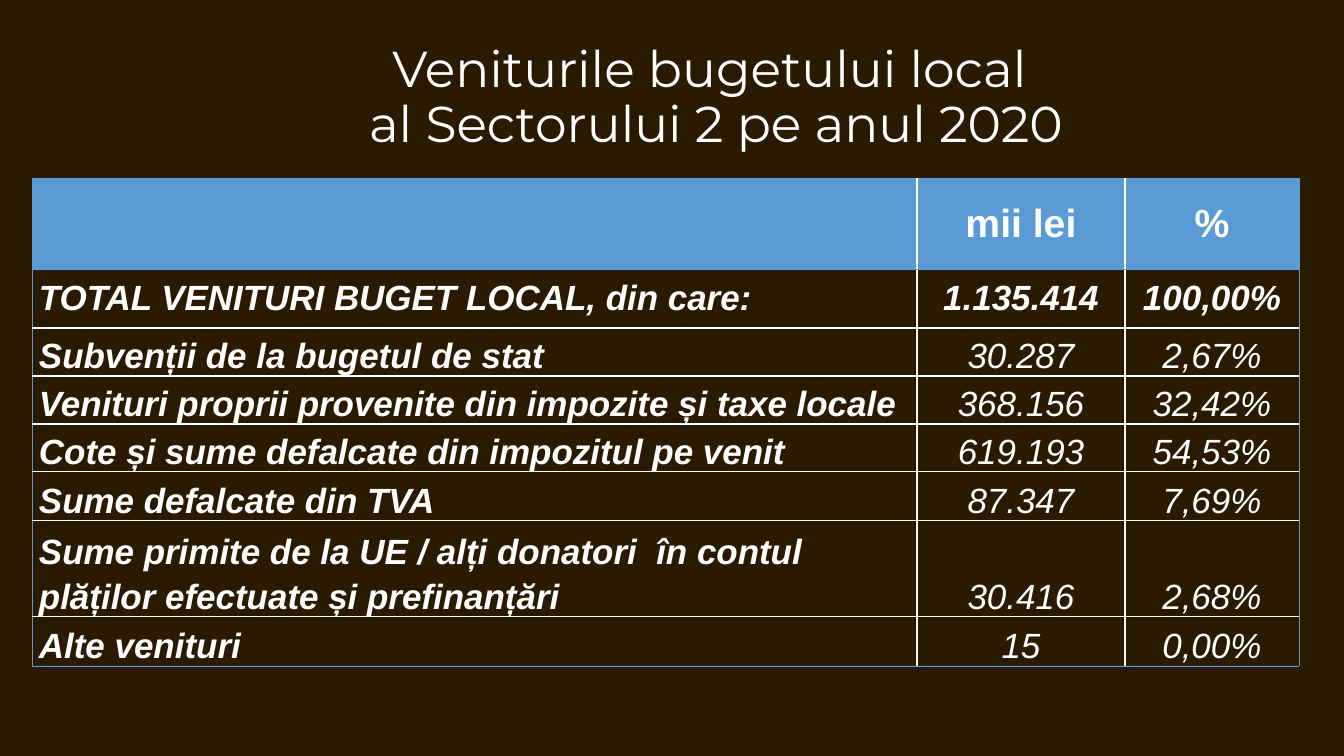
"""Build the slide on the local budget revenues of Sector 2 for 2020."""
from lxml import etree
from pptx import Presentation
from pptx.dml.color import RGBColor
from pptx.enum.text import MSO_ANCHOR, PP_ALIGN
from pptx.oxml.ns import qn
from pptx.util import Emu, Pt

LEFT, CENTER = PP_ALIGN.LEFT, PP_ALIGN.CENTER
MIDDLE, BOTTOM = MSO_ANCHOR.MIDDLE, MSO_ANCHOR.BOTTOM
WHITE, BLUE, BROWN = "FFFFFF", "5B9BD5", "2A1A00"

TITLE_LINES = ["Veniturile bugetului local", " al Sectorului 2 pe anul 2020"]
REVENUES = [
    ("", "mii lei", "%"),
    ("TOTAL VENITURI BUGET LOCAL, din care:", "1.135.414", "100,00%"),
    ("Subvenții de la bugetul de stat", "30.287", "2,67%"),
    ("Venituri proprii provenite din impozite și taxe locale", "368.156", "32,42%"),
    ("Cote și sume defalcate din impozitul pe venit", "619.193", "54,53%"),
    ("Sume defalcate din TVA", "87.347", "7,69%"),
    ("Sume primite de la UE / alți donatori  în contul plăților efectuate și prefinanțări",
     "30.416", "2,68%"),
    ("Alte venituri", "15", "0,00%"),
]
SLIDE_SIZE = (1344, 756)
TITLE_BOX = (106, 44, 1207, 109)
TABLE_ORIGIN = (32, 178)
COLUMN_WIDTHS = [885, 208, 174]
ROW_HEIGHTS = [91, 59, 48, 48, 48, 49, 96, 49]
SIDE_MARGIN = 7
HEADER, TOTAL = 0, 1
LAST_ROW, LAST_COLUMN = len(REVENUES) - 1, len(COLUMN_WIDTHS) - 1


def px(length):
    return Emu(round(length * 914400 / 100.8))


def color(value):
    return RGBColor.from_string(value)


def apply(target, values):
    for name, value in values.items():
        setattr(target, name, value)


def style_font(font, **values):
    apply(font, values)
    font.color.rgb = color(WHITE)


def border_edges(row, column):
    """Return the colour of each drawn edge: blue on the outline and under the header."""
    edges = {
        "a:lnL": BLUE if column == 0 else WHITE,
        "a:lnR": BLUE if column == LAST_COLUMN else WHITE,
        "a:lnT": BLUE if row <= TOTAL else WHITE,
        "a:lnB": BLUE if row in (HEADER, LAST_ROW) else WHITE,
    }
    return edges


def draw_borders(cell, edges):
    properties = cell._tc.get_or_add_tcPr()
    for position, (tag, edge_color) in enumerate(edges.items()):
        width = Pt(0.5) if edge_color == BLUE else Pt(1)
        line = etree.Element(qn(tag), w=str(int(width)))
        fill = etree.SubElement(line, qn("a:solidFill"))
        etree.SubElement(fill, qn("a:srgbClr"), val=edge_color)
        properties.insert(position, line)


def fill_title(title):
    apply(title, dict(zip(("left", "top", "width", "height"), map(px, TITLE_BOX))))
    apply(title.text_frame, {"word_wrap": True, "vertical_anchor": MIDDLE})
    paragraph = title.text_frame.paragraphs[0]
    apply(paragraph, {"alignment": CENTER, "line_spacing": 0.9})
    for index, text in enumerate(TITLE_LINES):
        if index:
            paragraph.add_line_break()
        run = paragraph.add_run()
        run.text = text
        style_font(run.font, name="Montserrat", size=Pt(36), bold=False)


def fill_cell(cell, text, row, column):
    is_detail = row > TOTAL
    apply(cell, {
        "margin_left": px(SIDE_MARGIN), "margin_right": px(SIDE_MARGIN),
        "margin_top": 0, "margin_bottom": 0,
        "vertical_anchor": BOTTOM if is_detail else MIDDLE,
    })
    if row == HEADER:
        cell.fill.solid()
        cell.fill.fore_color.rgb = color(BLUE)
    else:
        cell.fill.background()
    draw_borders(cell, border_edges(row, column))
    paragraph = cell.text_frame.paragraphs[0]
    apply(paragraph, {
        "alignment": CENTER if column else LEFT,
        "line_spacing": 1.15 if is_detail else 1.0,
    })
    if text:
        run = paragraph.add_run()
        run.text = text
        style_font(run.font, name="Arial", size=Pt(28 if row == HEADER else 25),
                   bold=not (is_detail and column), italic=row != HEADER)


def add_revenue_table(slide):
    size = (sum(COLUMN_WIDTHS), sum(ROW_HEIGHTS))
    table = slide.shapes.add_table(
        len(REVENUES), len(COLUMN_WIDTHS), *map(px, TABLE_ORIGIN + size)).table
    apply(table, {"first_row": False, "horz_banding": False})
    for column, width in zip(table.columns, COLUMN_WIDTHS):
        column.width = px(width)
    for row, height in zip(table.rows, ROW_HEIGHTS):
        row.height = px(height)
    for row, revenue in enumerate(REVENUES):
        for column, text in enumerate(revenue):
            fill_cell(table.cell(row, column), text, row, column)


def main():
    deck = Presentation()
    deck.slide_width, deck.slide_height = map(px, SLIDE_SIZE)
    slide = deck.slides.add_slide(deck.slide_layouts[5])
    slide.background.fill.solid()
    slide.background.fill.fore_color.rgb = color(BROWN)
    fill_title(slide.shapes.title)
    add_revenue_table(slide)
    deck.save("out.pptx")


if __name__ == "__main__":
    main()
